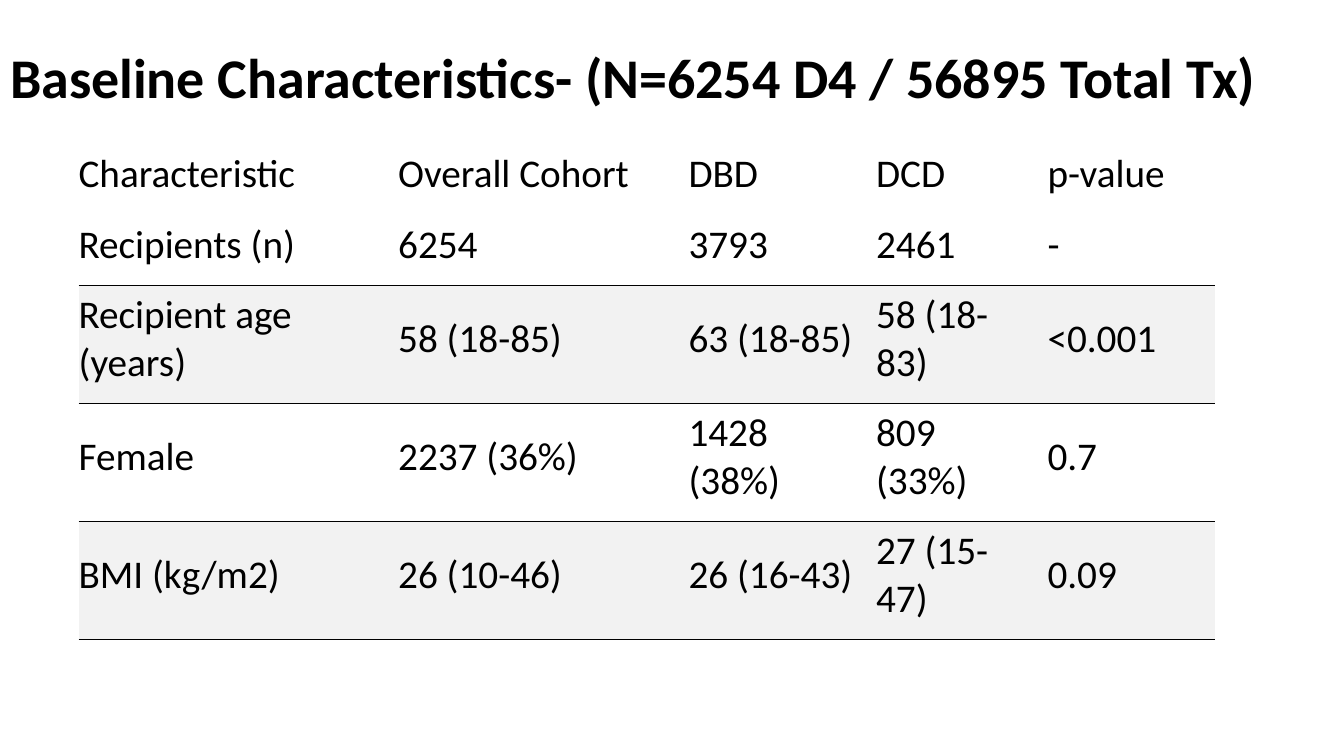
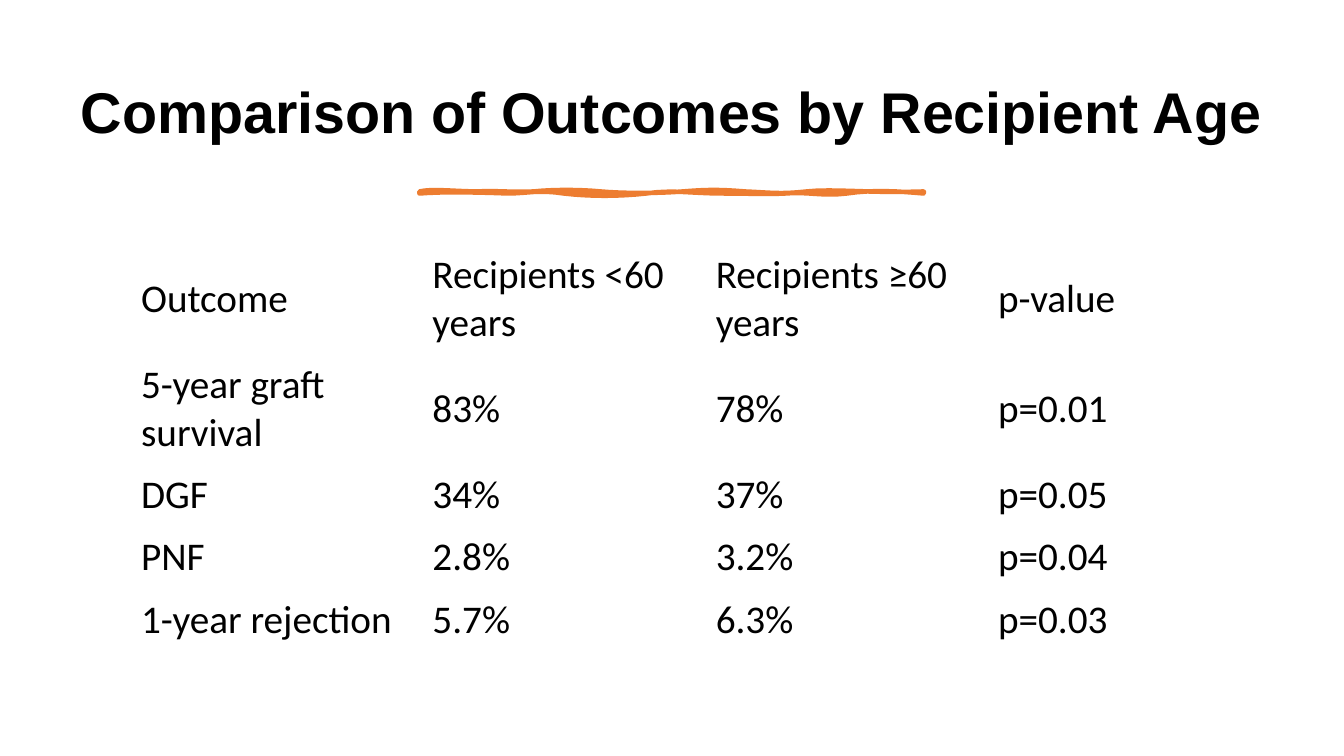
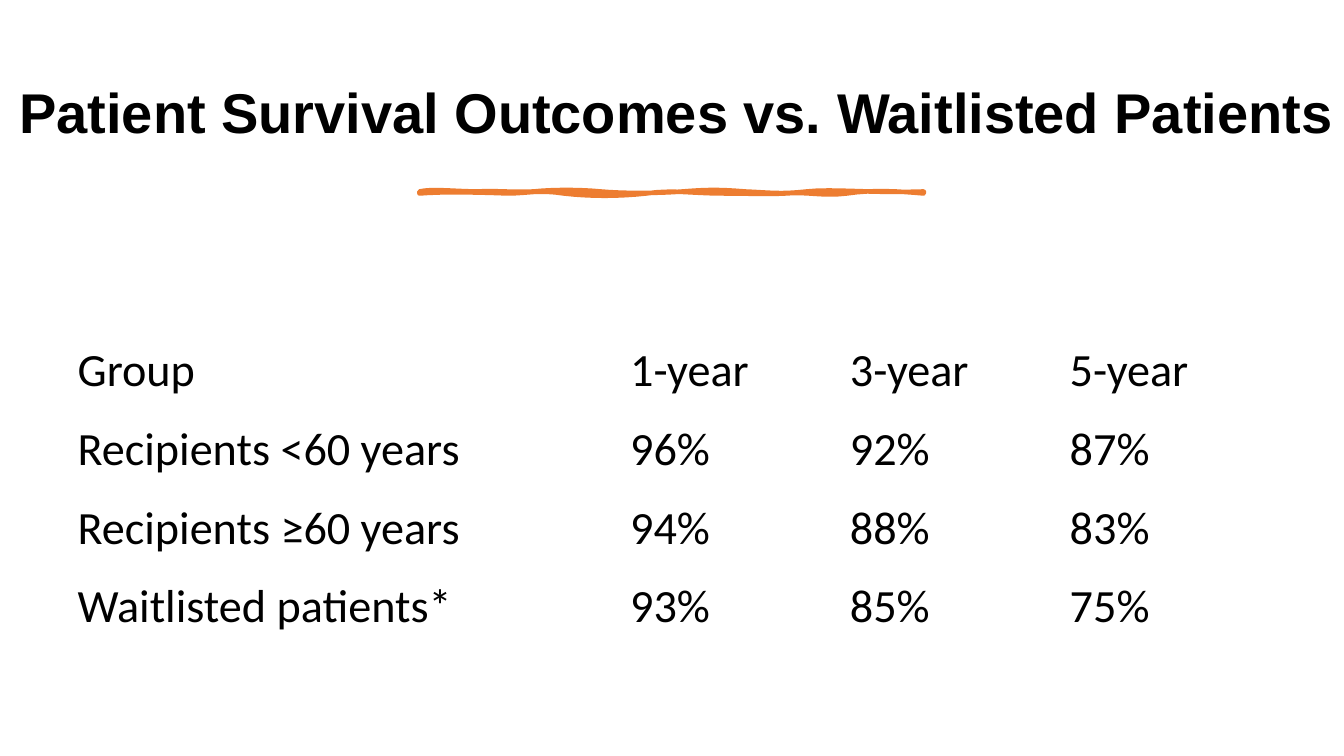
import dataclasses
import typing

import lxml.etree
import pptx
import pptx.dml.color
import pptx.enum.text
import pptx.oxml.ns
import pptx.util

PX = 9144  # EMU in one px, at 100 px to the inch
COLOURS = {"text": "000000", "accent": "ED7D31", "band": "F2F2F2", "rule": "000000"}
NO_STYLE_NO_GRID = "{2D5ABB26-0587-4C30-8999-92F81FD0307C}"
TITLE_ONLY_LAYOUT = 5
CURVE_STEPS = 8
LEFT = pptx.enum.text.PP_ALIGN.LEFT
CENTER = pptx.enum.text.PP_ALIGN.CENTER
MIDDLE = pptx.enum.text.MSO_ANCHOR.MIDDLE
BOTTOM = pptx.enum.text.MSO_ANCHOR.BOTTOM

Point = tuple[float, float]
Box = tuple[int, int, int, int]  # left, top, width, height
Insets = tuple[int, int, int, int]  # left, top, right, bottom

# Hand-drawn rule: a start point, then cubic curves (two controls and an end)
RULE_START: Point = (416, 190)
RULE_CURVES: list[tuple[Point, Point, Point]] = [
    ((428, 187), (454, 190), (473, 190)),
    ((492, 189), (509, 191), (529, 190)),
    ((549, 188), (574, 188), (596, 190)),
    ((617, 192), (653, 192), (677, 190)),
    ((702, 188), (714, 188), (739, 190)),
    ((763, 191), (774, 193), (800, 190)),
    ((826, 187), (867, 192), (916, 190)),
    ((917, 191), (916, 191), (916, 192)),
    ((895, 190), (865, 188), (840, 192)),
    ((815, 195), (801, 190), (779, 192)),
    ((756, 193), (747, 192), (717, 192)),
    ((687, 192), (667, 188), (641, 192)),
    ((614, 195), (585, 195), (559, 192)),
    ((534, 188), (523, 192), (503, 192)),
    ((483, 191), (438, 190), (416, 192)),
    ((416, 191), (416, 190), (416, 190)),
]


@dataclasses.dataclass
class Title:
    text: str
    box: Box
    size: int = 40
    font: str = "Arial"
    alignment: typing.Any = CENTER


@dataclasses.dataclass
class Grid:
    left: int
    top: int
    columns: list[int]
    heights: list[int]
    rows: list[list[str]]
    size: int
    insets: Insets
    header_insets: Insets | None = None
    header_anchor: typing.Any = MIDDLE
    banded_rows: tuple[int, ...] = ()  # grey rows with a thin line above


@dataclasses.dataclass
class Page:
    title: Title
    grid: Grid
    has_rule: bool = True


PAGES = [
    Page(
        Title("Baseline Characteristics- (N=6254 D4 / 56895 Total Tx)",
              (0, 19, 1312, 122), font="Calibri", alignment=LEFT),
        Grid(
            78, 141, [317, 288, 186, 170, 166], [73, 64, 64, 64, 64, 98],
            [
                ["Characteristic", "Overall Cohort", "DBD", "DCD", "p-value"],
                ["Recipients (n)", "6254", "3793", "2461", "-"],
                ["Recipient age (years)", "58 (18-85)", "63 (18-85)", "58 (18-83)", "<0.001"],
                ["Female", "2237 (36%)", "1428 (38%)", "809 (33%)", "0.7"],
                ["BMI (kg/m2)", "26 (10-46)", "26 (16-43)", "27 (15-47)", "0.09"],
                [""] * 5,
            ],
            size=28, insets=(0, 5, 17, 17), header_insets=(0, 3, 17, 17),
            header_anchor=BOTTOM, banded_rows=(2, 4),
        ),
        has_rule=False,
    ),
    Page(
        Title("Comparison of Outcomes by Recipient Age", (70, 46, 1193, 137), size=41),
        Grid(
            126, 242, [289, 281, 280, 163], [104, 104, 62, 62, 62],
            [
                ["Outcome", "Recipients <60 years", "Recipients ≥60 years", "p-value"],
                ["5-year graft survival", "83%", "78%", "p=0.01"],
                ["DGF", "34%", "37%", "p=0.05"],
                ["PNF", "2.8%", "3.2%", "p=0.04"],
                ["1-year rejection", "5.7%", "6.3%", "p=0.03"],
            ],
            size=28, insets=(14, 7, 14, 7),
        ),
    ),
    Page(
        Title("Patient Survival Outcomes vs. Waitlisted Patients", (0, 46, 1341, 137)),
        Grid(
            59, 329, [548, 218, 218, 218], [78] * 4,
            [
                ["Group", "1-year", "3-year", "5-year"],
                ["Recipients <60 years", "96%", "92%", "87%"],
                ["Recipients ≥60 years", "94%", "88%", "83%"],
                ["Waitlisted patients*", "93%", "85%", "75%"],
            ],
            size=33, insets=(18, 9, 18, 9),
        ),
    ),
]


def px(length: float) -> int:
    return round(length * PX)


def colour(name: str) -> pptx.dml.color.RGBColor:
    return pptx.dml.color.RGBColor.from_string(COLOURS[name])


def write_text(frame: typing.Any, text: str, *, size: int, font: str = "Calibri",
               bold: bool = False, alignment: typing.Any = LEFT,
               line_spacing: float = 1.0) -> None:
    paragraph = frame.paragraphs[0]
    paragraph.alignment = alignment
    paragraph.line_spacing = line_spacing
    run = paragraph.add_run()
    run.text = text
    run.font.size = pptx.util.Pt(size)
    run.font.name = font
    run.font.bold = bold
    run.font.color.rgb = colour("text")


def draw_title(slide: typing.Any, title: Title) -> None:
    shape = slide.shapes.title
    shape.left, shape.top, shape.width, shape.height = map(px, title.box)
    frame = shape.text_frame
    frame.word_wrap = True
    frame.auto_size = pptx.enum.text.MSO_AUTO_SIZE.NONE
    frame.vertical_anchor = MIDDLE
    write_text(frame, title.text, size=title.size, font=title.font, bold=True,
               alignment=title.alignment, line_spacing=0.9)


def curve_points(start: Point, curve: tuple[Point, Point, Point]) -> list[Point]:
    """Points along one cubic curve, without its start."""
    points = []
    for step in range(1, CURVE_STEPS + 1):
        t = step / CURVE_STEPS
        weights = ((1 - t) ** 3, 3 * t * (1 - t) ** 2, 3 * t * t * (1 - t), t ** 3)
        x, y = (sum(weight * point[axis] for weight, point in zip(weights, (start, *curve)))
                for axis in (0, 1))
        points.append((px(x), px(y)))
    return points


def draw_rule(slide: typing.Any) -> None:
    points: list[Point] = []
    start = RULE_START
    for curve in RULE_CURVES:
        points += curve_points(start, curve)
        start = curve[-1]
    builder = slide.shapes.build_freeform(px(RULE_START[0]), px(RULE_START[1]))
    builder.add_line_segments(points, close=True)
    shape = builder.convert_to_shape()
    shape.shadow.inherit = False
    shape.fill.solid()
    shape.fill.fore_color.rgb = colour("accent")
    shape.line.color.rgb = colour("accent")
    shape.line.width = pptx.util.Pt(3.25)


def add_border(cell: typing.Any, side: str) -> None:
    """Put a thin line on one side ("lnT" or "lnB") of a cell."""
    name = pptx.oxml.ns.qn
    line = lxml.etree.Element(name(f"a:{side}"), w=str(pptx.util.Pt(0.75)))
    fill = lxml.etree.SubElement(line, name("a:solidFill"))
    lxml.etree.SubElement(fill, name("a:srgbClr"), val=COLOURS["rule"])
    cell._tc.get_or_add_tcPr().insert(0, line)


def draw_cell(cell: typing.Any, text: str, row: int, grid: Grid) -> None:
    is_header = row == 0
    insets = grid.header_insets if is_header and grid.header_insets else grid.insets
    cell.margin_left, cell.margin_top, cell.margin_right, cell.margin_bottom = map(px, insets)
    cell.vertical_anchor = grid.header_anchor if is_header else MIDDLE
    if row in grid.banded_rows:
        cell.fill.solid()
        cell.fill.fore_color.rgb = colour("band")
        add_border(cell, "lnT")
    else:
        cell.fill.background()
    if row + 1 in grid.banded_rows:
        add_border(cell, "lnB")
    if text:
        write_text(cell.text_frame, text, size=grid.size)


def draw_grid(slide: typing.Any, grid: Grid) -> None:
    frame = slide.shapes.add_table(
        len(grid.heights), len(grid.columns), px(grid.left), px(grid.top),
        px(sum(grid.columns)), px(sum(grid.heights)))
    table = frame.table
    table.first_row = table.horz_banding = False
    table._tbl.tblPr.find(pptx.oxml.ns.qn("a:tableStyleId")).text = NO_STYLE_NO_GRID
    for column, width in zip(table.columns, grid.columns):
        column.width = px(width)
    for row, (height, texts) in enumerate(zip(grid.heights, grid.rows)):
        table.rows[row].height = px(height)
        for column, text in enumerate(texts):
            draw_cell(table.cell(row, column), text, row, grid)


def main() -> None:
    presentation = pptx.Presentation()
    presentation.slide_width = pptx.util.Inches(13.33)
    presentation.slide_height = pptx.util.Inches(7.5)
    layout = presentation.slide_layouts[TITLE_ONLY_LAYOUT]
    for page in PAGES:
        slide = presentation.slides.add_slide(layout)
        draw_title(slide, page.title)
        if page.has_rule:
            draw_rule(slide)
        draw_grid(slide, page.grid)
    presentation.save("out.pptx")


if __name__ == "__main__":
    main()
